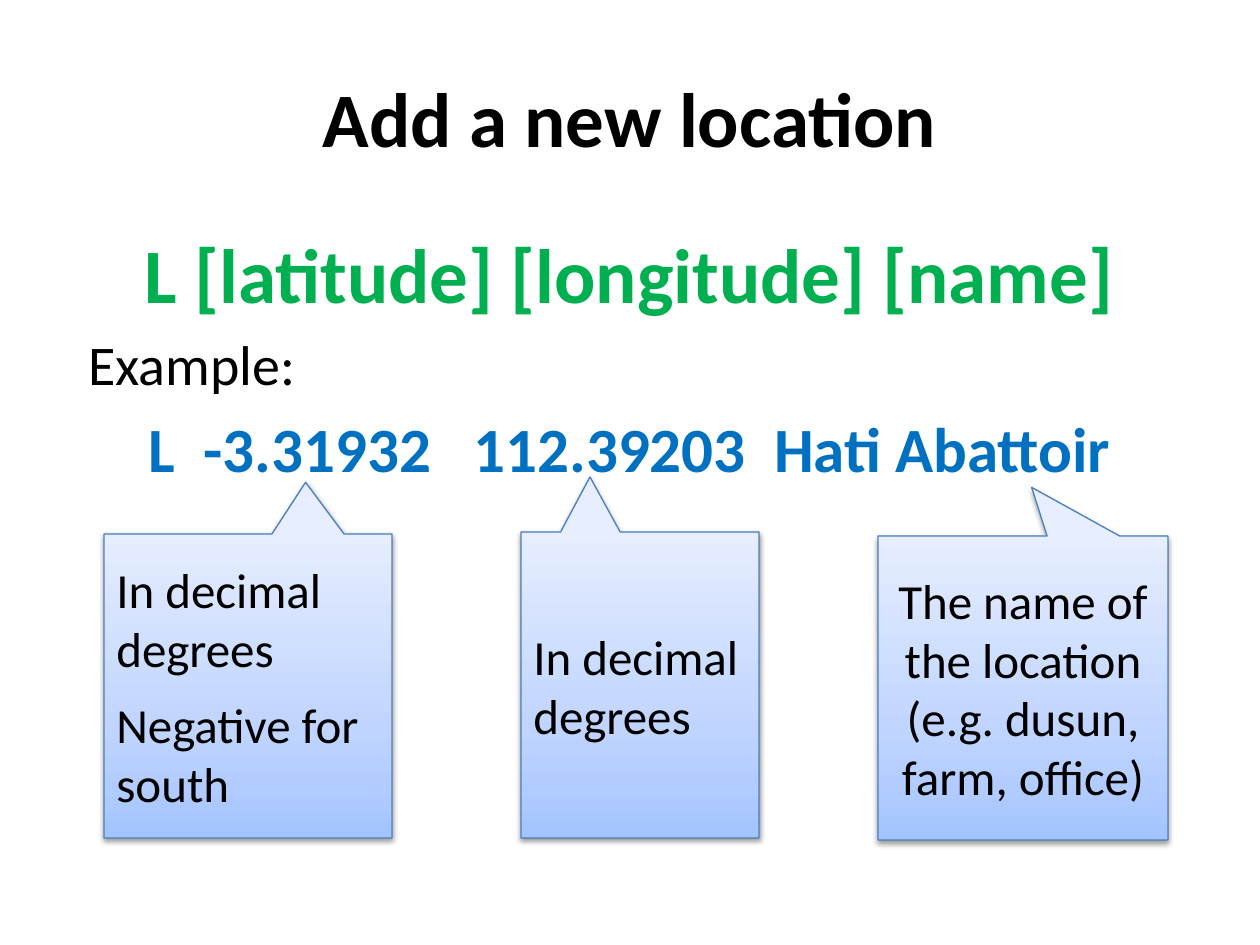
from copy import deepcopy
from dataclasses import dataclass

from lxml import etree
from pptx import Presentation
from pptx.dml.color import RGBColor
from pptx.enum.shapes import MSO_SHAPE
from pptx.enum.text import MSO_ANCHOR, PP_ALIGN
from pptx.oxml.ns import qn
from pptx.util import Emu, Pt

CALLOUT = MSO_SHAPE.RECTANGULAR_CALLOUT
LEFT, CENTER = PP_ALIGN.LEFT, PP_ALIGN.CENTER
TOP, MIDDLE = MSO_ANCHOR.TOP, MSO_ANCHOR.MIDDLE
EMU_PER_PX = 914400 / 126
FONT = "Calibri"
BLACK, GREEN, BLUE, EDGE = "000000", "00B050", "0070C0", "4B7EBC"
GRADIENT = ((0, "A4C4FF"), (0.35, "BFD4FF"), (1, "E6EEFF"))


@dataclass(frozen=True)
class Box:
    left: int
    top: int
    width: int
    height: int

    def emu(self) -> list[Emu]:
        return [px(n) for n in (self.left, self.top, self.width, self.height)]


@dataclass(frozen=True)
class Line:
    text: str
    size: int = 28
    color: str = BLACK
    bold: bool = False
    align: PP_ALIGN = LEFT
    before: float = 0
    after: float = 0


@dataclass(frozen=True)
class Callout:
    box: Box
    tip: tuple[float, float]
    notes: tuple[str, ...]
    align: PP_ALIGN = LEFT


TITLE_BOX = Box(63, 38, 1134, 158)
TITLE = [Line("Add a new location", 44, BLACK, True, CENTER)]

SYNTAX_BOX = Box(63, 220, 1134, 624)
SYNTAX = [
    Line("L [latitude] [longitude] [name]", 44, GREEN, True, CENTER),
    Line(" Example:", 32, before=6.4),
    Line("L  -3.31932   112.39203  Hati Abattoir", 36, BLUE, True, CENTER, before=7.2),
]

CALLOUTS = [
    Callout(Box(104, 534, 288, 304), (0.2, -0.67),
            ("In decimal degrees", "Negative for south")),
    Callout(Box(521, 532, 238, 306), (-0.21, -0.68), ("In decimal degrees",)),
    Callout(Box(878, 536, 290, 304), (0.03, -0.66),
            ("The name of the location (e.g. dusun, farm, office)",), CENTER),
]


def px(length: int) -> Emu:
    return Emu(round(length * EMU_PER_PX))


def rgb(value: str) -> RGBColor:
    return RGBColor.from_string(value)


def apply(target, values: dict) -> None:
    for key, value in values.items():
        setattr(target, key, value)


def write_lines(frame, lines: list[Line], anchor: MSO_ANCHOR) -> None:
    apply(frame, {"word_wrap": True, "vertical_anchor": anchor})
    for index, line in enumerate(lines):
        paragraph = frame.add_paragraph() if index else frame.paragraphs[0]
        apply(paragraph, {"alignment": line.align, "space_before": Pt(line.before),
                          "space_after": Pt(line.after)})
        run = paragraph.add_run()
        run.text = line.text
        apply(run.font, {"name": FONT, "size": Pt(line.size), "bold": line.bold})
        run.font.color.rgb = rgb(line.color)


def add_text(slide, box: Box, lines: list[Line], anchor: MSO_ANCHOR) -> None:
    write_lines(slide.shapes.add_textbox(*box.emu()).text_frame, lines, anchor)


def fill_gradient(shape) -> None:
    shape.fill.gradient()
    shape.fill.gradient_angle = 90
    stop_list = shape._element.spPr.find(".//" + qn("a:gsLst"))
    stop_list.append(deepcopy(stop_list[0]))
    for stop, (position, color) in zip(shape.fill.gradient_stops, GRADIENT):
        stop.position = position
        stop.color.rgb = rgb(color)


def cast_shadow(shape) -> None:
    shape.shadow.inherit = False
    effects = shape._element.spPr.find(qn("a:effectLst"))
    shadow = etree.SubElement(effects, qn("a:outerShdw"), blurRad=str(Pt(3.1)),
                              dist=str(Pt(1.6)), dir="5400000", rotWithShape="0")
    tint = etree.SubElement(shadow, qn("a:srgbClr"), val=BLACK)
    etree.SubElement(tint, qn("a:alpha"), val="38000")


def add_callout(slide, callout: Callout) -> None:
    shape = slide.shapes.add_shape(CALLOUT, *callout.box.emu())
    for index, offset in enumerate(callout.tip):
        shape.adjustments[index] = offset
    fill_gradient(shape)
    shape.line.color.rgb = rgb(EDGE)
    shape.line.width = Pt(0.75)
    cast_shadow(shape)
    notes = [Line(note, align=callout.align, after=10) for note in callout.notes]
    write_lines(shape.text_frame, notes, MIDDLE)


def main() -> None:
    deck = Presentation()
    apply(deck, {"slide_width": px(1260), "slide_height": px(945)})
    slide = deck.slides.add_slide(deck.slide_layouts[6])
    add_text(slide, TITLE_BOX, TITLE, MIDDLE)
    add_text(slide, SYNTAX_BOX, SYNTAX, TOP)
    for callout in CALLOUTS:
        add_callout(slide, callout)
    deck.save("out.pptx")


if __name__ == "__main__":
    main()
